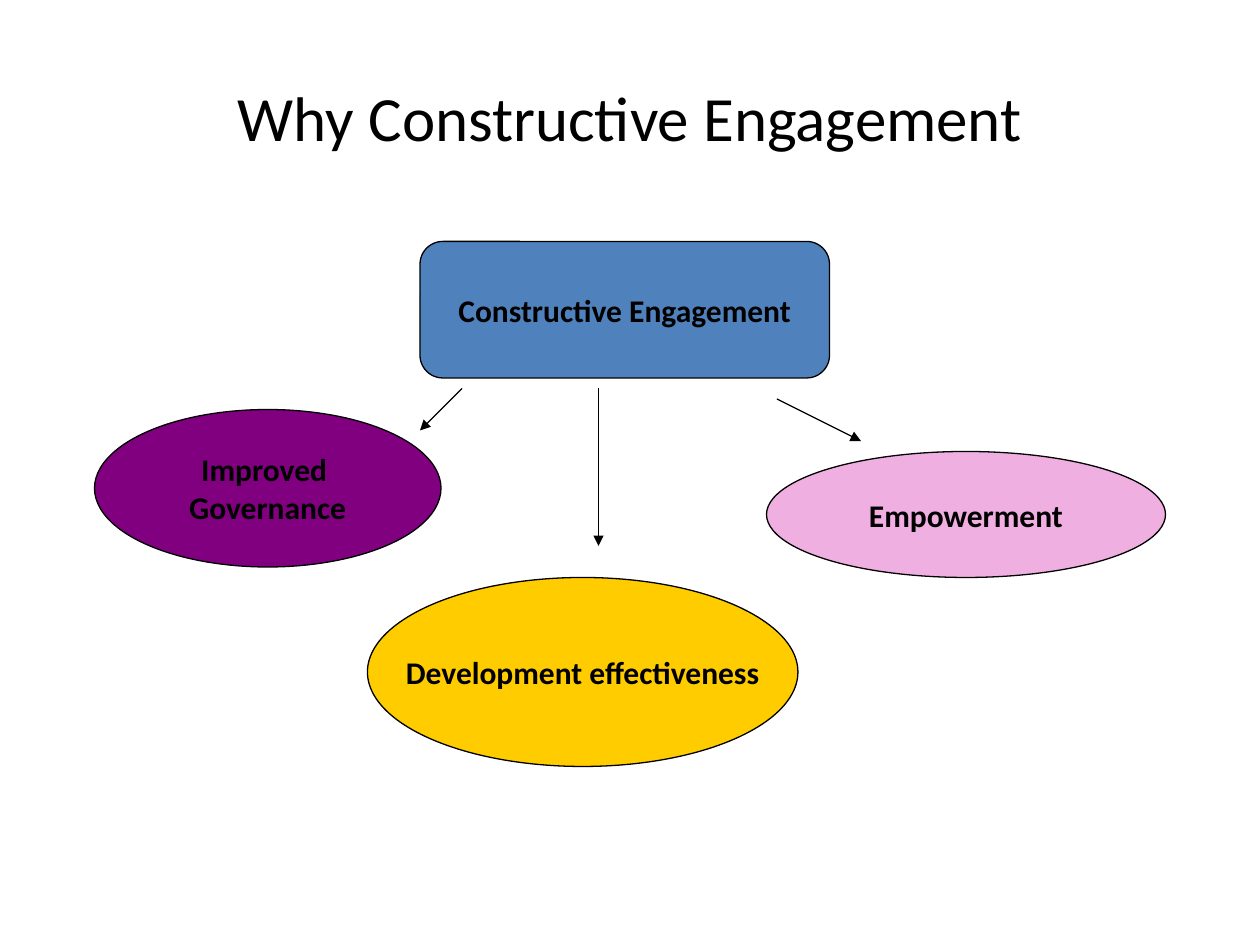
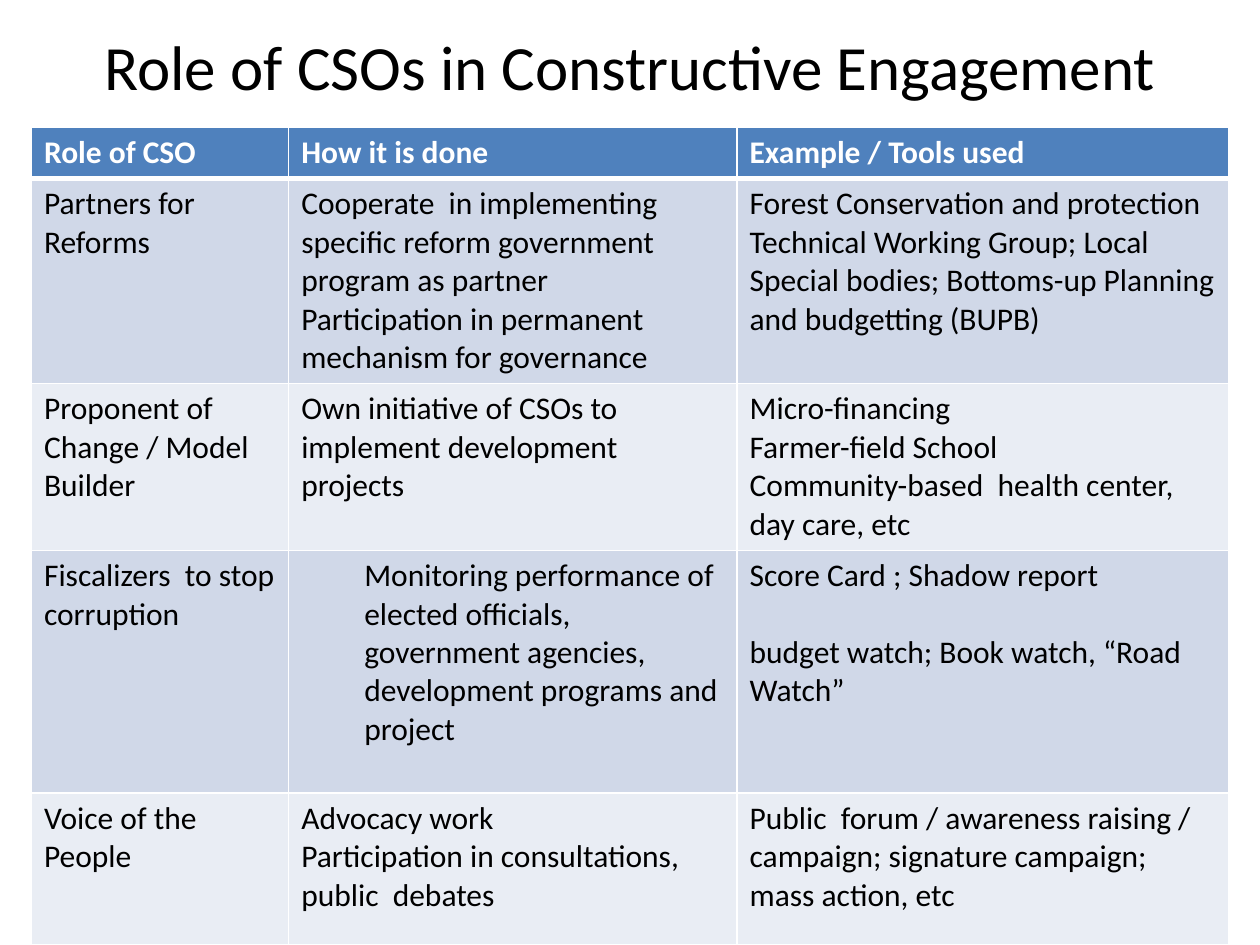
from lxml.etree import SubElement
from pptx import Presentation
from pptx.dml.color import RGBColor
from pptx.enum.shapes import MSO_CONNECTOR, MSO_SHAPE
from pptx.enum.text import MSO_ANCHOR, MSO_AUTO_SIZE, PP_ALIGN
from pptx.oxml.ns import qn
from pptx.util import Pt

PX = 7620
COLORS = {
    "black": "000000", "white": "FFFFFF", "blue": "4F81BD",
    "purple": "800080", "gold": "FFCC00", "pink": "EFAFE1",
    "band_dark": "D0D8E8", "band_light": "E9EDF4",
}
FORMATS = {
    "title": {"name": "Calibri", "size": Pt(36), "bold": False},
    "label": {"name": "Calibri", "size": Pt(18), "bold": True},
    "body": {"name": "Calibri", "size": Pt(18), "bold": False},
}
FRAME = {"auto_size": MSO_AUTO_SIZE.NONE, "vertical_anchor": MSO_ANCHOR.MIDDLE}


def px(*values):
    return [v * PX for v in values]


def rgb(name):
    return RGBColor.from_string(COLORS[name])


def assign(target, values):
    for key, value in values.items():
        setattr(target, key, value)


class Deck:
    def __init__(self):
        self.prs = Presentation()
        self.prs.slide_width, self.prs.slide_height = px(1200, 900)
        self.slide = None

    def add_text(self, tf, lines, style, color="black", align=PP_ALIGN.LEFT):
        for i, line in enumerate(lines):
            p = tf.paragraphs[0] if i == 0 else tf.add_paragraph()
            p.alignment = align
            r = p.add_run()
            r.text = line
            assign(r.font, FORMATS[style])
            r.font.color.rgb = rgb(color)

    def add_slide(self, title, top, height):
        self.slide = self.prs.slides.add_slide(self.prs.slide_layouts[5])
        sp = self.slide.shapes.title
        sp.left, sp.top, sp.width, sp.height = px(60, top, 1080, height)
        assign(sp.text_frame, FRAME)
        self.add_text(sp.text_frame, [title], "title", align=PP_ALIGN.CENTER)

    def outline(self, line):
        line.color.rgb = rgb("black")
        line.width = Pt(0.75)

    def node(self, kind, box, fill, *lines):
        sp = self.slide.shapes.add_shape(kind, *px(*box))
        sp.shadow.inherit = False
        sp.fill.solid()
        sp.fill.fore_color.rgb = rgb(fill)
        self.outline(sp.line)
        assign(sp.text_frame, {**FRAME, "word_wrap": False})
        self.add_text(sp.text_frame, lines, "label", align=PP_ALIGN.CENTER)

    def arrow(self, *ends):
        cxn = self.slide.shapes.add_connector(MSO_CONNECTOR.STRAIGHT, *px(*ends))
        self.outline(cxn.line)
        sp_pr = cxn._element.spPr
        SubElement(sp_pr.find(qn("a:ln")), qn("a:tailEnd"), type="triangle")
        SubElement(sp_pr, qn("a:effectLst"))

    def border(self, cell, side, points):
        ln = SubElement(cell._tc.get_or_add_tcPr(), qn(f"a:ln{side}"), w=str(Pt(points)))
        fill = SubElement(ln, qn("a:solidFill"))
        SubElement(fill, qn("a:srgbClr"), val=COLORS["white"])

    def table(self, left, top, widths, heights, rows):
        frame = self.slide.shapes.add_table(
            len(rows), len(widths), *px(left, top, sum(widths), sum(heights)))
        table = frame.table
        for column, width in zip(table.columns, px(*widths)):
            column.width = width
        for row, height in zip(table.rows, px(*heights)):
            row.height = height
        for i, row in enumerate(rows):
            fill = "blue" if i == 0 else ("band_light", "band_dark")[i % 2]
            style, color = ("label", "white") if i == 0 else ("body", "black")
            for j, lines in enumerate(row):
                cell = table.cell(i, j)
                for side in "LRTB":
                    heavy = (i, side) in ((0, "B"), (1, "T"))
                    self.border(cell, side, 3 if heavy else 1)
                cell.fill.solid()
                cell.fill.fore_color.rgb = rgb(fill)
                self.add_text(cell.text_frame, lines, style, color)
        return table


ROLES = [
    [["Role of CSO"], ["How it is done"], ["Example / Tools used"]],
    [["Partners for Reforms"],
     ["Cooperate  in implementing specific reform government program as partner",
      "Participation in permanent mechanism for governance"],
     ["Forest Conservation and protection",
      "Technical Working Group; Local Special bodies; Bottoms-up Planning "
      "and budgetting (BUPB)"]],
    [["Proponent of Change / Model Builder"],
     ["Own initiative of CSOs to implement development projects"],
     ["Micro-financing", "Farmer-field School",
      "Community-based  health center, day care, etc"]],
    [["Fiscalizers  to stop corruption"],
     ["Monitoring performance of elected officials,  government agencies, "
      "development programs and project"],
     ["Score Card ; Shadow report", "budget watch; Book watch, “Road Watch”"]],
    [["Voice of the People"],
     ["Advocacy work", "Participation in consultations, public  debates"],
     ["Public  forum / awareness raising / campaign; signature campaign; "
      "mass action, etc"]],
]


def build_reasons(deck):
    deck.add_slide("Why Constructive Engagement", 36, 150)
    deck.node(MSO_SHAPE.ROUNDED_RECTANGLE, (400, 230, 390, 130), "blue",
              "Constructive Engagement")
    for box, fill, *lines in (
        ((90, 390, 330, 150), "purple", "Improved ", "Governance"),
        ((350, 550, 410, 180), "gold", "Development effectiveness"),
        ((730, 430, 380, 120), "pink", "Empowerment"),
    ):
        deck.node(MSO_SHAPE.OVAL, box, fill, *lines)
    for ends in ((440, 370, 400, 410), (570, 370, 570, 520), (740, 380, 820, 420)):
        deck.arrow(*ends)


def build_roles(deck):
    deck.add_slide("Role of CSOs in Constructive Engagement", 20, 84)
    table = deck.table(30, 121, (245, 427, 468), (49, 195, 159, 231, 145), ROLES)
    monitoring = table.cell(3, 1).text_frame.paragraphs[0]
    monitoring._p.get_or_add_pPr().set("marL", str(60 * PX))
    table.cell(3, 2).text_frame.paragraphs[1].space_before = Pt(22)


def main():
    deck = Deck()
    build_reasons(deck)
    build_roles(deck)
    deck.prs.save("out.pptx")


if __name__ == "__main__":
    main()
